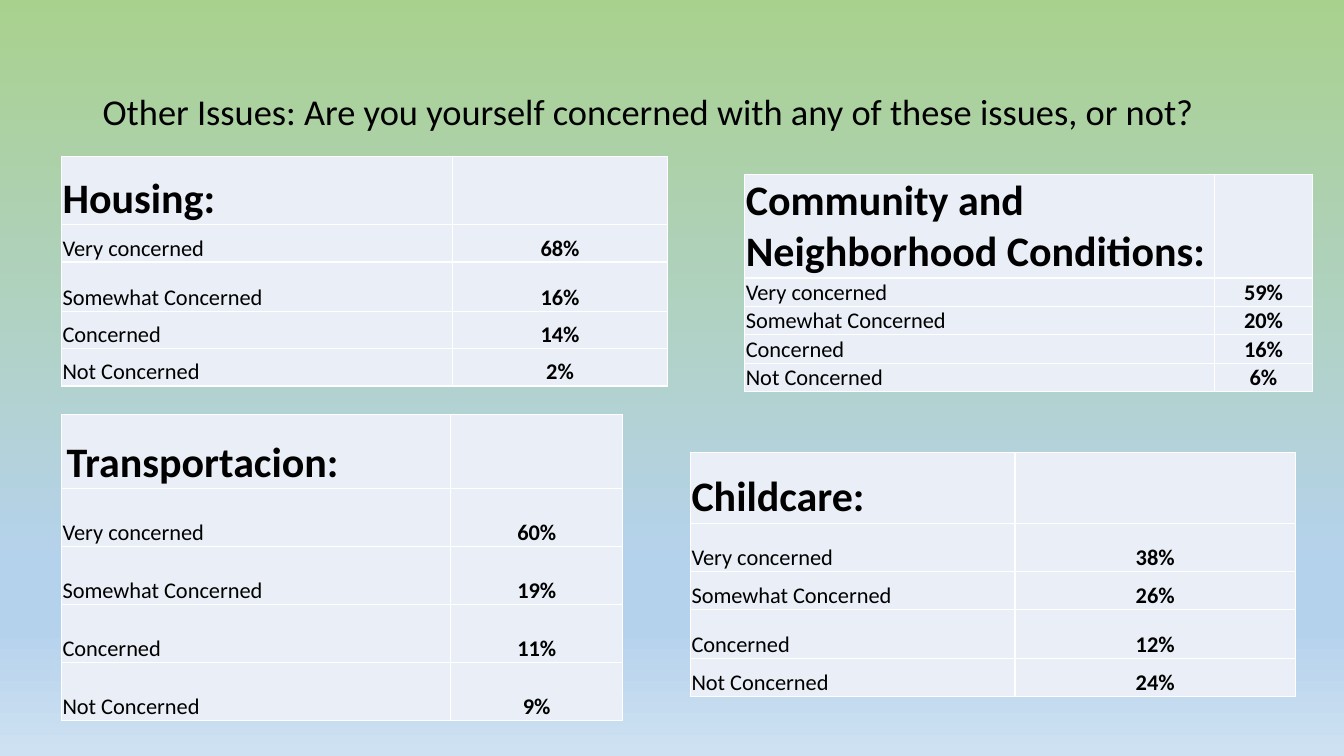
from lxml.etree import SubElement
from pptx import Presentation
from pptx.dml.color import RGBColor
from pptx.enum.text import MSO_ANCHOR, PP_ALIGN
from pptx.oxml.ns import qn
from pptx.util import Inches, Pt


def color(value):
    return RGBColor.from_string(value)


def style(p, size, bold=False):
    p.font.name = "Calibri"
    p.font.size = Pt(size)
    p.font.bold = bold
    p.font.color.rgb = color("000000")


prs = Presentation()
prs.slide_width = Inches(13.33)
prs.slide_height = Inches(7.5)
W = prs.slide_width / 100
H = prs.slide_height / 100
s = prs.slides.add_slide(prs.slide_layouts[6])

fill = s.background.fill
fill.gradient()
fill.gradient_angle = 270
stops = next(s._element.iter(qn("a:gsLst")))
for stop in list(stops):
    stops.remove(stop)
for pos, rgb in [(0, "A9D18E"), (74, "B5D2EC"), (83, "B5D2EC"), (100, "CEE1F2")]:
    stop = SubElement(stops, qn("a:gs"), pos=str(pos * 1000))
    SubElement(stop, qn("a:srgbClr"), val=rgb)

LEVELS = ["Very concerned", "Somewhat Concerned", "Concerned", "Not Concerned"]
issues = [
    ("Housing:", 4.58, 20.67, [29.1, 15.98], [9.07, 4.93, 6.53, 4.93, 4.93],
     ["68%", "16%", "14%", "2%"], 0.01),
    ("Transportacion:", 4.58, 54.8, [28.95, 12.82], [9.87] + [7.67] * 4,
     ["60%", "19%", "11%", "9%"], 0.05),
    ("Community and Neighborhood Conditions:", 55.42, 23.07, [34.95, 7.28], [10.53] + [2.8] * 4,
     ["59%", "20%", "16%", "6%"], 0.01),
    ("Childcare:", 51.38, 59.87, [24.15, 20.85], [9.33, 6.4, 5.07, 6.4, 5.07],
     ["38%", "26%", "12%", "24%"], 0.01),
]

for heading, left, top, cols, rows, shares, indent in issues:
    frame = s.shapes.add_table(len(rows), len(cols), int(left * W), int(top * H),
                               int(sum(cols) * W), int(sum(rows) * H))
    table = frame.table
    table.first_row = False
    table.horz_banding = False
    for column, width in zip(table.columns, cols):
        column.width = int(width * W)
    for row, height in zip(table.rows, rows):
        row.height = int(height * H)
    texts = [(heading, "")] + list(zip(LEVELS, shares))
    for i, row_texts in enumerate(texts):
        for j, text in enumerate(row_texts):
            cell = table.cell(i, j)
            cell.vertical_anchor = MSO_ANCHOR.BOTTOM
            cell.margin_left = Inches(indent if i == 0 else 0.01)
            cell.margin_right = cell.margin_top = Inches(0.01)
            cell.margin_bottom = 0
            tcPr = cell._tc.get_or_add_tcPr()
            for side in ("lnL", "lnR", "lnT", "lnB"):
                line = SubElement(tcPr, qn("a:" + side), w=str(Pt(1)))
                SubElement(SubElement(line, qn("a:solidFill")), qn("a:srgbClr"), val="FFFFFF")
            cell.fill.solid()
            cell.fill.fore_color.rgb = color("EAEFF7")
            if text:
                p = cell.text_frame.paragraphs[0]
                p.text = text
                p.alignment = PP_ALIGN.CENTER if j else PP_ALIGN.LEFT
                style(p, 16 if i else 30, bold=i == 0 or j == 1)

title = s.shapes.add_textbox(int(6.9 * W), int(5.33 * H), int(86.25 * W), int(19.33 * H))
tf = title.text_frame
tf.word_wrap = True
tf.vertical_anchor = MSO_ANCHOR.MIDDLE
p = tf.paragraphs[0]
p.text = "Other Issues: Are you yourself concerned with any of these issues, or not?"
p.line_spacing = 0.9
style(p, 26)

prs.save("out.pptx")
